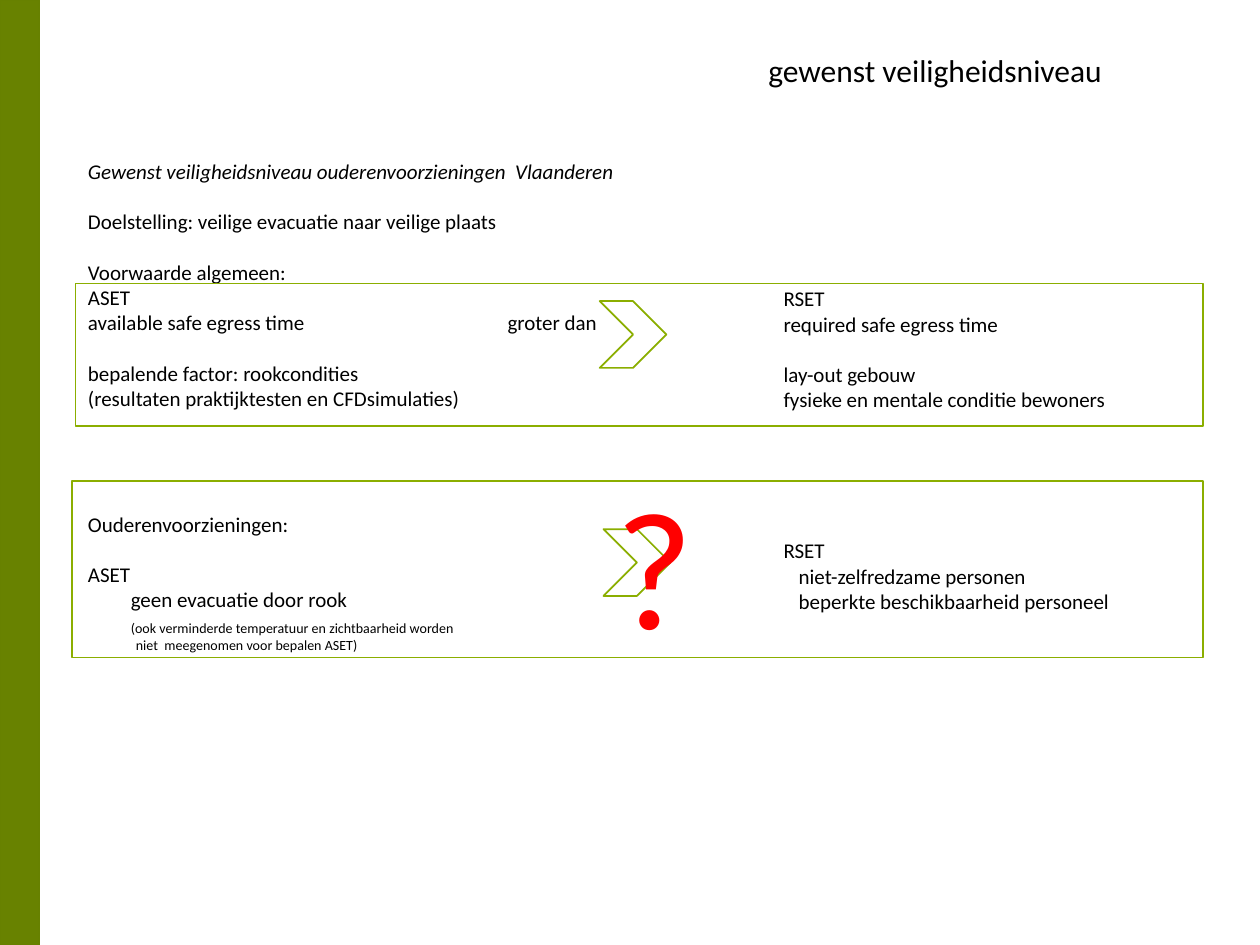
from dataclasses import dataclass

from pptx import Presentation
from pptx import util as u
from pptx.dml.color import RGBColor
from pptx.enum import shapes, text

COLORS = {"band": "688200", "band_line": "678100", "outline": "8BAE00",
          "text": "000000", "question": "FF0000"}
FONT = "Calibri"
LINE_HEIGHT = 14.4  # points taken by one 12 pt line

# The grid has 100 columns and 75 rows
CELL = u.Inches(0.1)


@dataclass(frozen=True)
class Area:
    column: float
    row: float
    columns: float
    rows: float

    def lengths(self) -> list[int]:
        return [round(cells * CELL)
                for cells in (self.column, self.row, self.columns, self.rows)]


@dataclass(frozen=True)
class Line:
    words: str
    gap: float = 0  # empty lines above
    indent: float = 0  # grid columns
    size: float = 12
    italic: bool = False
    tab: float = 0  # grid columns


@dataclass(frozen=True)
class Outline:
    kind: shapes.MSO_SHAPE
    area: Area


TITLE = [Line("gewenst veiligheidsniveau", size=18)]
ASET = [
    Line("Gewenst veiligheidsniveau ouderenvoorzieningen  Vlaanderen", italic=True),
    Line("Doelstelling: veilige evacuatie naar veilige plaats", gap=1),
    Line("Voorwaarde algemeen:", gap=1),
    Line("ASET"),
    Line("available safe egress time\tgroter dan", tab=33.3),
    Line("bepalende factor: rookcondities", gap=1),
    Line("(resultaten praktijktesten en CFDsimulaties)"),
    Line("Ouderenvoorzieningen:", gap=4),
    Line("ASET", gap=1),
    Line("geen evacuatie door rook", indent=3.4),
    Line("(ook verminderde temperatuur en zichtbaarheid worden",
         gap=0.3, indent=3.4, size=8),
    Line("niet  meegenomen voor bepalen ASET)", indent=3.8, size=8),
]
RSET = [
    Line("RSET"),
    Line("required safe egress time"),
    Line("lay-out gebouw", gap=1),
    Line("fysieke en mentale conditie bewoners"),
    Line("RSET", gap=5),
    Line("niet-zelfredzame personen", indent=1.2),
    Line("beperkte beschikbaarheid personeel", indent=1.2),
]

GENERAL_CHEVRON = Outline(shapes.MSO_SHAPE.CHEVRON, Area(47.6, 23.9, 5.3, 5.3))
CARE_CHEVRON = Outline(shapes.MSO_SHAPE.CHEVRON, Area(47.9, 42, 5.3, 5.3))
CARE_FRAME = Outline(shapes.MSO_SHAPE.RECTANGLE, Area(5.7, 38.2, 89.8, 14))
GENERAL_FRAME = Outline(shapes.MSO_SHAPE.RECTANGLE, Area(6, 22.5, 89.5, 11.3))


def color(name: str) -> RGBColor:
    return RGBColor.from_string(COLORS[name])


def write(paragraph, words: str, *, size: float = 12, italic: bool = False,
          color_name: str = "text") -> None:
    run = paragraph.add_run()
    run.text = words
    font = run.font
    font.name, font.size, font.italic = FONT, u.Pt(size), italic
    font.color.rgb = color(color_name)


def draw_shape(slide, outline: Outline, *, fill: str = "", line: str = "outline"):
    shape = slide.shapes.add_shape(outline.kind, *outline.area.lengths())
    shape.shadow.inherit = False
    if fill:
        shape.fill.solid()
        shape.fill.fore_color.rgb = color(fill)
    else:
        shape.fill.background()
    shape.line.color.rgb = color(line)
    shape.line.width = u.Pt(1)
    return shape


def draw_text(slide, area: Area, lines: list[Line]) -> None:
    frame = slide.shapes.add_textbox(*area.lengths()).text_frame
    frame.word_wrap = True
    frame.auto_size = text.MSO_AUTO_SIZE.SHAPE_TO_FIT_TEXT
    for number, line in enumerate(lines):
        paragraph = frame.add_paragraph() if number else frame.paragraphs[0]
        properties = paragraph._p.get_or_add_pPr()
        if line.indent:
            properties.set("marL", str(round(line.indent * CELL)))
            properties.set("indent", "0")
        if line.gap:
            paragraph.space_before = u.Pt(round(line.gap * LINE_HEIGHT, 1))
        if line.tab:
            stops = properties.makeelement(
                "{http://schemas.openxmlformats.org/drawingml/2006/main}tabLst", {})
            stop = stops.makeelement(
                "{http://schemas.openxmlformats.org/drawingml/2006/main}tab",
                {"pos": str(round(line.tab * CELL)), "algn": "l"})
            stops.append(stop)
            properties.append(stops)
        write(paragraph, line.words, size=line.size, italic=line.italic)


def main() -> None:
    presentation = Presentation()
    presentation.slide_width, presentation.slide_height = 100 * CELL, 75 * CELL
    slide = presentation.slides.add_slide(presentation.slide_layouts[6])

    # Side band and the upper chevron
    band = Outline(shapes.MSO_SHAPE.RECTANGLE, Area(0, 0, 3.1, 75))
    draw_shape(slide, band, fill="band", line="band_line")
    draw_shape(slide, GENERAL_CHEVRON)

    # Title and the two text columns
    draw_text(slide, Area(60, 3.6, 29.2, 4), TITLE)
    draw_text(slide, Area(6, 12.1, 52, 40.7), ASET)
    draw_text(slide, Area(61.2, 22.2, 28.1, 27.3), RSET)

    # Frames, with the question mark on the lower chevron
    draw_shape(slide, CARE_FRAME)
    chevron = draw_shape(slide, CARE_CHEVRON)
    chevron.text_frame.vertical_anchor = text.MSO_ANCHOR.MIDDLE
    paragraph = chevron.text_frame.paragraphs[0]
    paragraph.alignment = text.PP_ALIGN.CENTER
    write(paragraph, "?", size=96, color_name="question")
    draw_shape(slide, GENERAL_FRAME)

    presentation.save("out.pptx")


if __name__ == "__main__":
    main()
